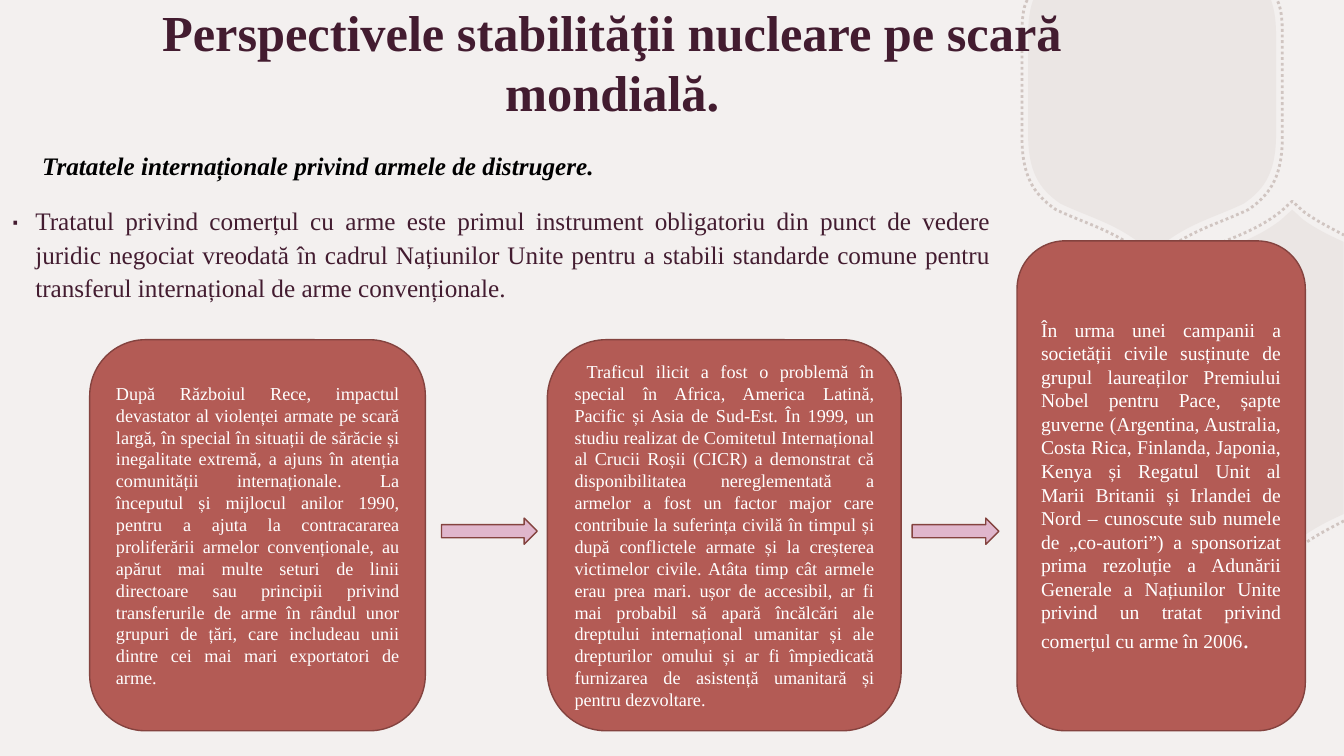
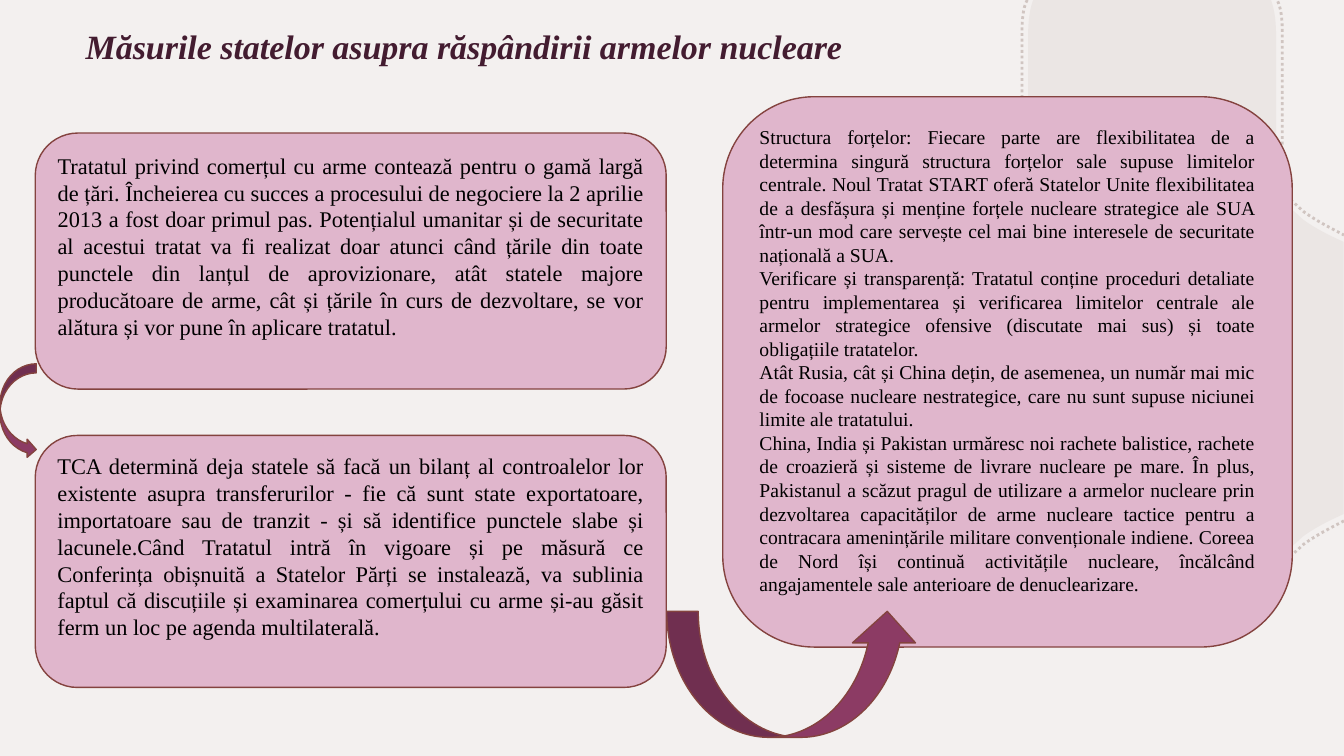
from dataclasses import dataclass

import lxml.etree
import pptx
import pptx.dml.color
import pptx.enum.dml
import pptx.enum.shapes
import pptx.enum.text
import pptx.oxml.ns
import pptx.util

Inches = pptx.util.Inches
Align = pptx.enum.text.PP_ALIGN
Anchor = pptx.enum.text.MSO_ANCHOR
Preset = pptx.enum.shapes.MSO_SHAPE


@dataclass(frozen=True)
class Theme:
    font: str = "Times New Roman"
    background: str = "F3F0EF"
    ornament: str = "BFAFAA"
    plum: str = "431C30"
    brick: str = "B35B55"
    pink: str = "E0B6CC"
    magenta: str = "8C3B64"
    edge: str = "84433F"
    black: str = "000000"
    white: str = "FFFFFF"
    title_size: float = 36
    heading_size: float = 24.3
    body_size: float = 18
    large_size: float = 16
    medium_size: float = 14
    small_size: float = 13


THEME = Theme()
WIDTH, HEIGHT = 40 / 3, 7.5


@dataclass(frozen=True)
class Area:
    left: float
    top: float
    width: float
    height: float

    def lengths(self) -> tuple:
        return tuple(Inches(value) for value in (self.left, self.top, self.width, self.height))


@dataclass(frozen=True)
class Panel:
    area: Area
    fill: str
    color: str
    size: float
    paragraphs: tuple[str, ...]
    bottom_inset: float = 0.05
    first_indent: float = 0
    closing_mark: str = ""


@dataclass(frozen=True)
class Arrow:
    area: Area
    preset: Preset
    fill: str
    rotation: float = 0


@dataclass(frozen=True)
class Badge:
    x: float
    y: float
    mirror: tuple[int, int]
    kinds: str
    half: tuple[tuple[float, float], ...]


BADGES = (
    Badge(11.43, 0.84, (-1, 1), "CLCCL", (
        (-1.18, -0.84), (-1.22, -0.73), (-1.23, -0.61), (-1.23, -0.48),
        (-1.23, 0.49), (-1.23, 0.85), (-1.13, 1.03), (-0.91, 1.18),
        (-0.64, 1.31), (-0.38, 1.37), (-0.11, 1.58), (0, 1.67),
    )),
    Badge(12.82, 3.75, (1, -1), "CLLCCL", (
        (0.51, 1.35), (0.38, 1.41), (0.25, 1.47), (0.11, 1.57), (0, 1.67), (-0.11, 1.57),
        (-0.38, 1.36), (-0.64, 1.31), (-0.91, 1.17), (-1.13, 1.02), (-1.23, 0.84),
        (-1.23, 0.49), (-1.23, 0),
    )),
)

TREATY_PANELS = (
    Panel(Area(0.89, 3.37, 3.33, 3.88), THEME.brick, THEME.white, THEME.small_size, (
        "După Războiul Rece, impactul devastator al violenței armate pe scară largă, în special în situații de sărăcie și inegalitate extremă, a ajuns în atenția comunității internaționale. La începutul și mijlocul anilor 1990, pentru a ajuta la contracararea proliferării armelor convenționale, au apărut mai multe seturi de linii directoare sau principii privind transferurile de arme în rândul unor grupuri de țări, care includeau unii dintre cei mai mari exportatori de arme.",
    )),
    Panel(Area(5.43, 3.37, 3.51, 3.88), THEME.brick, THEME.white, THEME.small_size, (
        "Traficul ilicit a fost o problemă în special în Africa, America Latină, Pacific și Asia de Sud-Est. În 1999, un studiu realizat de Comitetul Internațional al Crucii Roșii (CICR) a demonstrat că disponibilitatea nereglementată a armelor a fost un factor major care contribuie la suferința civilă în timpul și după conflictele armate și la creșterea victimelor civile. Atâta timp cât armele erau prea mari. ușor de accesibil, ar fi mai probabil să apară încălcări ale dreptului internațional umanitar și ale drepturilor omului și ar fi împiedicată furnizarea de asistență umanitară și pentru dezvoltare.",
    ), first_indent=0.12),
    Panel(Area(10.09, 2.39, 2.86, 4.86), THEME.brick, THEME.white, THEME.medium_size, (
        "În urma unei campanii a societății civile susținute de grupul laureaților Premiului Nobel pentru Pace, șapte guverne (Argentina, Australia, Costa Rica, Finlanda, Japonia, Kenya și Regatul Unit al Marii Britanii și Irlandei de Nord – cunoscute sub numele de „co-autori”) a sponsorizat prima rezoluție a Adunării Generale a Națiunilor Unite privind un tratat privind comerțul cu arme în 2006",
    ), closing_mark="."),
)

MEASURE_PANELS = (
    Panel(Area(0.35, 1.32, 6.26, 2.54), THEME.pink, THEME.black, THEME.large_size, (
        "Tratatul privind comerțul cu arme contează pentru o gamă largă de țări. Încheierea cu succes a procesului de negociere la 2 aprilie 2013 a fost doar primul pas. Potențialul umanitar și de securitate al acestui tratat va fi realizat doar atunci când țările din toate punctele din lanțul de aprovizionare, atât statele majore producătoare de arme, cât și țările în curs de dezvoltare, se vor alătura și vor pune în aplicare tratatul.",
    ), bottom_inset=0.35),
    Panel(Area(7.17, 0.96, 5.65, 5.46), THEME.pink, THEME.black, THEME.medium_size, (
        "Structura forțelor: Fiecare parte are flexibilitatea de a determina singură structura forțelor sale supuse limitelor centrale. Noul Tratat START oferă Statelor Unite flexibilitatea de a desfășura și menține forțele nucleare strategice ale SUA într-un mod care servește cel mai bine interesele de securitate națională a SUA.",
        "Verificare și transparență: Tratatul conține proceduri detaliate pentru implementarea și verificarea limitelor centrale ale armelor strategice ofensive (discutate mai sus) și toate obligațiile tratatelor.",
        "Atât Rusia, cât și China dețin, de asemenea, un număr mai mic de focoase nucleare nestrategice, care nu sunt supuse niciunei limite ale tratatului.",
        "China, India și Pakistan urmăresc noi rachete balistice, rachete de croazieră și sisteme de livrare nucleare pe mare. În plus, Pakistanul a scăzut pragul de utilizare a armelor nucleare prin dezvoltarea capacităților de arme nucleare tactice pentru a contracara amenințările militare convenționale indiene. Coreea de Nord își continuă activitățile nucleare, încălcând angajamentele sale anterioare de denuclearizare.",
    ), bottom_inset=0.28),
    Panel(Area(0.35, 4.32, 6.26, 2.5), THEME.pink, THEME.black, THEME.large_size, (
        "TCA determină deja statele să facă un bilanț al controalelor lor existente asupra transferurilor - fie că sunt state exportatoare, importatoare sau de tranzit - și să identifice punctele slabe și lacunele.Când Tratatul intră în vigoare și pe măsură ce Conferința obișnuită a Statelor Părți se instalează, va sublinia faptul că discuțiile și examinarea comerțului cu arme și-au găsit ferm un loc pe agenda multilaterală.",
    ), bottom_inset=0.35),
)

TREATY_ARROWS = (
    Arrow(Area(4.38, 5.14, 0.95, 0.26), Preset.RIGHT_ARROW, THEME.pink),
    Arrow(Area(9.05, 5.14, 0.86, 0.26), Preset.RIGHT_ARROW, THEME.pink),
)
MEASURE_ARROWS = (
    Arrow(Area(0, 3.61, 0.36, 0.94), Preset.CURVED_RIGHT_ARROW, THEME.magenta),
    Arrow(Area(7.24, 5.44, 1.25, 2.5), Preset.CURVED_RIGHT_ARROW, THEME.magenta, 270),
)


def rgb(value: str) -> pptx.dml.color.RGBColor:
    return pptx.dml.color.RGBColor.from_string(value)


def add_element(parent, tag: str, **attributes: str) -> None:
    lxml.etree.SubElement(parent, pptx.oxml.ns.qn(tag), attributes)


def set_font(font, size: float, color: str, bold: bool = False, italic: bool = False) -> None:
    font.name = THEME.font
    font.size = pptx.util.Pt(size)
    font.color.rgb = rgb(color)
    font.bold = bold
    font.italic = italic


def place(box, area: Area) -> None:
    box.left, box.top, box.width, box.height = area.lengths()


def badge_points(badge: Badge, scale: float) -> list[tuple]:
    across, down = badge.mirror
    ring = badge.half + tuple((across * x, down * y) for x, y in reversed(badge.half[:-1]))
    return [
        (Inches(min(badge.x + scale * x, WIDTH)), Inches(max(badge.y + scale * y, 0)))
        for x, y in ring
    ]


def bend_curves(shape, kinds: str) -> None:
    lines = iter(shape.element.xpath(".//a:path/a:lnTo"))
    for kind in kinds:
        line = next(lines)
        if kind == "C":
            bend = lxml.etree.Element(pptx.oxml.ns.qn("a:cubicBezTo"))
            line.addprevious(bend)
            for control in (line, next(lines), next(lines)):
                bend.append(control[0])
                control.getparent().remove(control)


def draw_badge(page, badge: Badge, scale: float, filled: bool):
    points = badge_points(badge, scale)
    builder = page.shapes.build_freeform(*points[0])
    builder.add_line_segments(points[1:], close=filled)
    shape = builder.convert_to_shape()
    bend_curves(shape, badge.kinds + badge.kinds[::-1])
    shape.shadow.inherit = False
    if filled:
        shape.fill.solid()
        shape.fill.fore_color.rgb = rgb(THEME.ornament)
        shape.line.fill.background()
        opacity = "15000"
    else:
        shape.fill.background()
        shape.line.color.rgb = rgb(THEME.ornament)
        shape.line.width = pptx.util.Pt(2)
        shape.line.dash_style = pptx.enum.dml.MSO_LINE.ROUND_DOT
        opacity = "65000"
    add_element(shape.element.xpath("./p:spPr//a:srgbClr")[0], "a:alpha", val=opacity)
    return shape


def decorate_master(deck, page) -> None:
    master = deck.slide_master
    master.background.fill.solid()
    master.background.fill.fore_color.rgb = rgb(THEME.background)
    layers = [(badge, scale, filled) for scale, filled in ((1, True), (1.05, False)) for badge in BADGES]
    for index, layer in enumerate(layers):
        element = draw_badge(page, *layer).element
        element.xpath("./p:nvSpPr/p:cNvPr")[0].set("id", str(100 + index))
        master.shapes.element.insert(2 + index, element)


def write_title(page, area: Area, text: str, size: float, align: Align, italic: bool = False) -> None:
    box = page.shapes.title
    place(box, area)
    frame = box.text_frame
    frame.text = text
    frame.auto_size = pptx.enum.text.MSO_AUTO_SIZE.NONE
    frame.vertical_anchor = Anchor.MIDDLE
    para = frame.paragraphs[0]
    para.alignment = align
    set_font(para.font, size, THEME.plum, bold=True, italic=italic)


def write_body(page, area: Area, text: str) -> None:
    box = page.placeholders[1]
    place(box, area)
    frame = box.text_frame
    frame.text = text
    frame.auto_size = pptx.enum.text.MSO_AUTO_SIZE.NONE
    para = frame.paragraphs[0]
    para.alignment = Align.JUSTIFY
    para.line_spacing = 1.1
    para.space_before = pptx.util.Pt(0)
    properties = para._p.get_or_add_pPr()
    properties.set("marL", str(Inches(0.25)))
    properties.set("indent", str(Inches(-0.25)))
    add_element(properties, "a:buSzPct", val="150000")
    add_element(properties, "a:buChar", char="∙")
    set_font(para.font, THEME.body_size, THEME.plum)


def write_subtitle(page, area: Area, text: str) -> None:
    frame = page.shapes.add_textbox(*area.lengths()).text_frame
    frame.word_wrap = False
    frame.text = text
    set_font(frame.paragraphs[0].font, THEME.body_size, THEME.black, bold=True, italic=True)


def draw_shape(page, preset: Preset, area: Area, fill: str):
    shape = page.shapes.add_shape(preset, *area.lengths())
    shape.shadow.inherit = False
    shape.fill.solid()
    shape.fill.fore_color.rgb = rgb(fill)
    shape.line.color.rgb = rgb(THEME.edge)
    shape.line.width = pptx.util.Pt(1)
    return shape


def draw_panel(page, panel: Panel) -> None:
    frame = draw_shape(page, Preset.ROUNDED_RECTANGLE, panel.area, panel.fill).text_frame
    frame.word_wrap = True
    frame.vertical_anchor = Anchor.MIDDLE
    frame.margin_bottom = Inches(panel.bottom_inset)
    frame.text = "\n".join(panel.paragraphs)
    for para in frame.paragraphs:
        para.alignment = Align.JUSTIFY
        if panel.first_indent:
            para._p.get_or_add_pPr().set("indent", str(Inches(panel.first_indent)))
        set_font(para.font, panel.size, panel.color)
    if panel.closing_mark:
        span = frame.paragraphs[-1].add_run()
        span.text = panel.closing_mark
        span.font.size = pptx.util.Pt(THEME.body_size)


def draw_flow(page, panels: tuple[Panel, ...], arrows: tuple[Arrow, ...]) -> None:
    for panel in panels:
        draw_panel(page, panel)
    for arrow in arrows:
        draw_shape(page, arrow.preset, arrow.area, arrow.fill).rotation = arrow.rotation


def main() -> None:
    deck = pptx.Presentation()
    deck.slide_width, deck.slide_height = Inches(WIDTH), Inches(HEIGHT)

    treaties = deck.slides.add_slide(deck.slide_layouts[1])
    decorate_master(deck, treaties)
    write_title(treaties, Area(1.11, 0.01, 9.93, 1.2),
                "Perspectivele stabilităţii nucleare pe scară mondială.", THEME.title_size, Align.CENTER)
    write_body(treaties, Area(0, 1.96, 9.93, 1.49),
               "Tratatul privind comerțul cu arme este primul instrument obligatoriu din punct de vedere juridic negociat vreodată în cadrul Națiunilor Unite pentru a stabili standarde comune pentru transferul internațional de arme convenționale.")
    write_subtitle(treaties, Area(0.32, 1.44, 5.8, 0.4),
                   "Tratatele internaționale privind armele de distrugere.")
    draw_flow(treaties, TREATY_PANELS, TREATY_ARROWS)

    measures = deck.slides.add_slide(deck.slide_layouts[5])
    write_title(measures, Area(0.75, 0.06, 9.93, 0.79),
                "Măsurile statelor asupra răspândirii armelor nucleare", THEME.heading_size, Align.LEFT, italic=True)
    draw_flow(measures, MEASURE_PANELS, MEASURE_ARROWS)

    deck.save("out.pptx")


if __name__ == "__main__":
    main()
